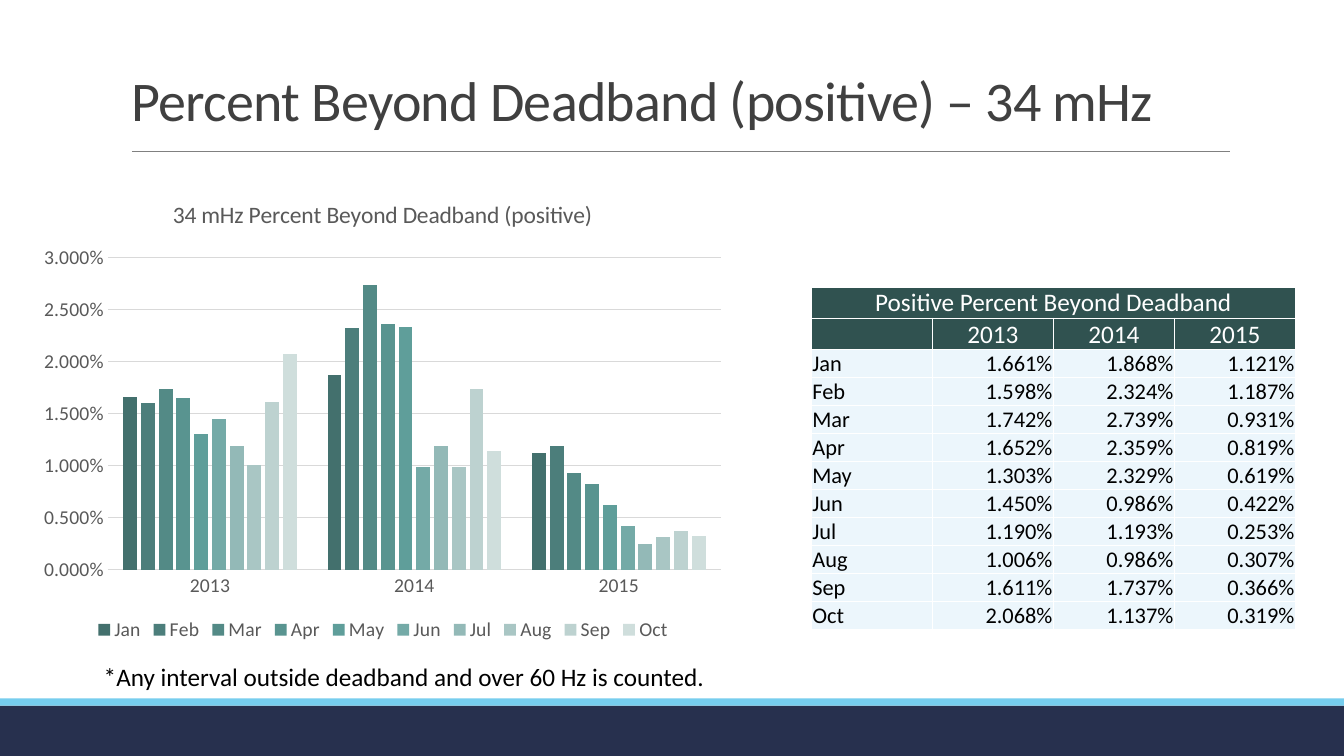
from dataclasses import dataclass

from lxml.etree import SubElement
from pptx import Presentation
from pptx.chart.data import CategoryChartData
from pptx.dml.color import RGBColor
from pptx.enum.chart import XL_CHART_TYPE as ChartType
from pptx.enum.chart import XL_LEGEND_POSITION as LegendSide
from pptx.enum.chart import XL_TICK_MARK as Tick
from pptx.enum.shapes import MSO_CONNECTOR as Connector
from pptx.enum.shapes import MSO_SHAPE as Preset
from pptx.enum.text import MSO_ANCHOR as Anchor
from pptx.enum.text import PP_ALIGN as Align
from pptx.oxml.ns import qn
from pptx.util import Pt


@dataclass(frozen=True)
class Theme:
    font: str = "Calibri"
    heading: str = "404040"
    ink: str = "000000"
    paper: str = "FFFFFF"
    chart_ink: str = "595959"
    grid: str = "D9D9D9"
    rule: str = "808080"
    navy: str = "27304E"
    sky: str = "76CDEE"
    header_fill: str = "305250"
    body_fill: str = "ECF6FC"
    months: tuple = ("43706D", "4C7E7B", "538A86", "599490", "5F9E9A",
                     "74AAA7", "93B9B7", "A9C6C4", "BDD2D0", "CFDEDC")
    title_size: int = 40
    text_size: int = 18
    body_size: int = 16
    chart_title_size: float = 16.8
    chart_size: int = 14


YEARS = ("2013", "2014", "2015")
PERCENTS = {
    "Jan": (1.661, 1.868, 1.121),
    "Feb": (1.598, 2.324, 1.187),
    "Mar": (1.742, 2.739, 0.931),
    "Apr": (1.652, 2.359, 0.819),
    "May": (1.303, 2.329, 0.619),
    "Jun": (1.450, 0.986, 0.422),
    "Jul": (1.190, 1.193, 0.253),
    "Aug": (1.006, 0.986, 0.307),
    "Sep": (1.611, 1.737, 0.366),
    "Oct": (2.068, 1.137, 0.319),
}


def apply(target, formats):
    for name, value in formats.items():
        setattr(target, name, value)


def paint(fill, color):
    fill.solid()
    fill.fore_color.rgb = RGBColor.from_string(color)


def pin(parent, index, **percents):
    """Fix a chart part at percents of the chart's size."""
    for old in parent.findall(qn("c:layout")):
        parent.remove(old)
    layout = SubElement(parent, qn("c:layout"))
    parent.insert(index, layout)
    manual = SubElement(layout, qn("c:manualLayout"))
    if "w" in percents:
        SubElement(manual, qn("c:layoutTarget"), val="inner")
    for axis in "xy":
        SubElement(manual, qn(f"c:{axis}Mode"), val="edge")
    for name, value in percents.items():
        SubElement(manual, qn(f"c:{name}"), val=f"{value / 100:.4f}")


class SlideBuilder:
    def __init__(self, slide, theme):
        self.shapes, self.theme = slide.shapes, theme

    def style(self, font, size, color):
        apply(font, {"name": self.theme.font, "size": Pt(size), "bold": False})
        font.color.rgb = RGBColor.from_string(color)

    def stroke(self, line, color, width):
        paint(line.fill, color)
        line.width = Pt(width)

    def band(self, box, color):
        band = self.shapes.add_shape(Preset.RECTANGLE, *map(Pt, box))
        band.shadow.inherit = False
        paint(band.fill, color)
        band.line.fill.background()

    def rule(self, ends, color, width):
        rule = self.shapes.add_connector(Connector.STRAIGHT, *map(Pt, ends))
        self.stroke(rule.line, color, width)
        SubElement(rule.element.spPr, qn("a:effectLst"))

    def text(self, box, words, size, color, anchor=Anchor.TOP, leading=1.0, tracking=0):
        frame = self.shapes.add_textbox(*map(Pt, box)).text_frame
        apply(frame, {"word_wrap": True, "vertical_anchor": anchor})
        line = frame.paragraphs[0]
        line.line_spacing = leading
        run = line.add_run()
        run.text = words
        self.style(run.font, size, color)
        if tracking:
            run.font._element.set("spc", str(tracking))

    def column_chart(self, box, title, categories, series, colors):
        theme = self.theme
        data = CategoryChartData(number_format="0.000%")
        data.categories = categories
        for name, percents in series.items():
            data.add_series(name, [round(p / 100, 4) for p in percents])
        chart = self.shapes.add_chart(ChartType.COLUMN_CLUSTERED, *map(Pt, box), data).chart
        self.style(chart.font, theme.chart_size, theme.chart_ink)

        # Chart title and legend
        apply(chart, {"has_title": True, "has_legend": True})
        heading = chart.chart_title.text_frame
        heading.text = title
        self.style(heading.paragraphs[0].runs[0].font, theme.chart_title_size, theme.chart_ink)
        apply(chart.legend, {"position": LegendSide.BOTTOM, "include_in_layout": False})
        self.style(chart.legend.font, theme.chart_size, theme.chart_ink)

        # Columns
        plot = chart.plots[0]
        apply(plot, {"gap_width": 219, "overlap": -27, "vary_by_categories": False})
        for columns, color in zip(plot.series, colors):
            paint(columns.format.fill, color)
            columns.invert_if_negative = False

        # Axes
        for axis in (chart.category_axis, chart.value_axis):
            apply(axis, {"major_tick_mark": Tick.NONE, "minor_tick_mark": Tick.NONE})
            self.style(axis.tick_labels.font, theme.chart_size, theme.chart_ink)
        self.stroke(chart.category_axis.format.line, theme.grid, 0.75)
        values = chart.value_axis
        apply(values, {"minimum_scale": 0, "maximum_scale": 0.03, "major_unit": 0.005,
                       "has_major_gridlines": True})
        apply(values.tick_labels, {"number_format": "0.000%", "number_format_is_linked": False})
        values.format.line.fill.background()
        self.stroke(values.major_gridlines.format.line, theme.grid, 0.75)

        # Places inside the chart
        pin(chart.element.find(".//" + qn("c:plotArea")), 0, x=11, y=17, w=86.9, h=66.7)
        pin(chart.element.find(".//" + qn("c:title")), 1, x=19.6, y=3.4)

    def cell(self, cell, words, size, color, fill, align, anchor):
        apply(cell, {"margin_left": Pt(0.7), "margin_right": Pt(0.7), "margin_top": Pt(0.7),
                     "margin_bottom": 0, "vertical_anchor": anchor})
        line = cell.text_frame.paragraphs[0]
        line.alignment = align
        if words:
            run = line.add_run()
            run.text = words
            self.style(run.font, size, color)
        props = cell._tc.get_or_add_tcPr()
        for side in ("lnL", "lnR", "lnT", "lnB"):
            border = SubElement(props, qn(f"a:{side}"), w=str(Pt(1)))
            SubElement(SubElement(border, qn("a:solidFill")), qn("a:srgbClr"), val=self.theme.paper)
        paint(cell.fill, fill)

    def percent_table(self, left, top, column_width, title, years, percents):
        theme = self.theme
        headers = [[title] + [""] * len(years), ["", *years]]
        body = [[month] + [f"{p:.3f}%" for p in row] for month, row in percents.items()]
        rows = headers + body
        heights = [22] * len(headers) + [20] * len(body)
        size = (column_width * len(rows[0]), sum(heights))
        table = self.shapes.add_table(len(rows), len(rows[0]), *map(Pt, (left, top, *size))).table
        apply(table, {"first_row": False, "horz_banding": False})
        for column in table.columns:
            column.width = Pt(column_width)
        for r, (words, height) in enumerate(zip(rows, heights)):
            table.rows[r].height = Pt(height)
            for c, word in enumerate(words):
                if r < len(headers):
                    look = (theme.text_size, theme.paper, theme.header_fill,
                            Align.CENTER, Anchor.MIDDLE)
                else:
                    look = (theme.body_size, theme.ink, theme.body_fill,
                            Align.RIGHT if c else Align.LEFT, Anchor.BOTTOM)
                self.cell(table.cell(r, c), word, *look)
        table.cell(0, 0).merge(table.cell(0, len(years)))


def main():
    deck = Presentation()
    apply(deck, {"slide_width": Pt(960), "slide_height": Pt(540)})
    theme = Theme()
    page = SlideBuilder(deck.slides.add_slide(deck.slide_layouts[6]), theme)

    # Footer bands and title rule
    page.band((0, 504, 960, 36), theme.navy)
    page.band((0, 498.8, 960, 5.2), theme.sky)
    page.rule((94.3, 108.3, 878.6, 108.3), theme.rule, 0.5)

    # Title and footnote
    page.text((86.8, 22.3, 792, 76.3), "Percent Beyond Deadband (positive) – 34 mHz",
              theme.title_size, theme.heading, Anchor.BOTTOM, 0.85, -50)
    page.text((67, 468.7, 744, 29), "*Any interval outside deadband and over 60 Hz is counted.",
              theme.text_size, theme.ink)

    # Monthly percentages as columns and as a table
    page.column_chart((21.6, 127.4, 504, 334), "34 mHz Percent Beyond Deadband (positive)",
                      YEARS, PERCENTS, theme.months)
    page.percent_table(579.6, 205, 86.4, "Positive Percent Beyond Deadband", YEARS, PERCENTS)

    deck.save("out.pptx")


if __name__ == "__main__":
    main()
